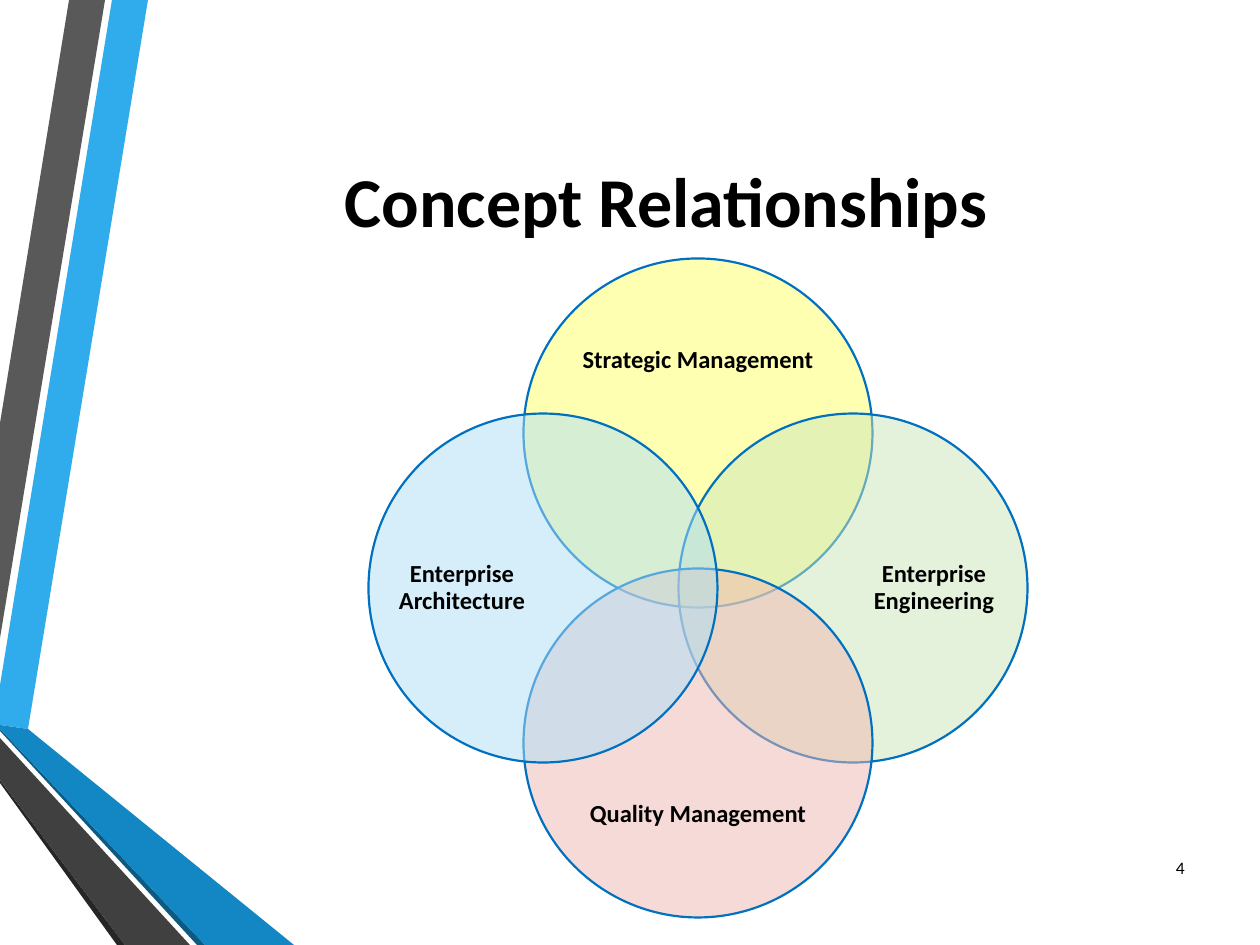
from lxml import etree
from pptx import Presentation
from pptx import util as u
from pptx.dml.color import RGBColor
from pptx.enum import shapes, text
from pptx.oxml.ns import qn

SCALE = 914400 / 126  # EMU in one px
FONT = "Calibri"

# Side ribbons, back to front: fill and corner points
RIBBONS = [
    ("30ACEC", [(0, 685), (0, 725), (28, 729), (148, 0), (112, 0)]),
    ("595959", [(105, 0), (69, 0), (0, 423), (0, 638)]),
    ("262626", [(0, 780), (0, 783), (117, 945), (125, 945)]),
    ("0C5A82", [(0, 729), (0, 731), (197, 945), (205, 945)]),
    ("1287C3", [(0, 729), (205, 945), (294, 945), (28, 729), (0, 725)]),
    ("404040", [(0, 780), (125, 945), (190, 945), (0, 738)]),
]

# Venn diagram: label, fill, direction from the centre
CENTRE_X, CENTRE_Y = 698, 588
DIAMETER, CIRCLE_SHIFT = 349, 155
CIRCLES = [
    ("Strategic Management", "FFFF66", 0, -1),
    ("Enterprise Engineering", "CCE7B9", 1, 0),
    ("Quality Management", "EFB7B1", 0, 1),
    ("Enterprise Architecture", "ACDEF7", -1, 0),
]


def px(length):
    return u.Emu(round(length * SCALE))


def rgb(code):
    return RGBColor.from_string(code)


def paint(shape, color):
    shape.shadow.inherit = False
    shape.fill.solid()
    shape.fill.fore_color.rgb = rgb(color)


def add_ribbon(page, color, points):
    builder = page.shapes.build_freeform(*points[0], scale=SCALE)
    builder.add_line_segments(points[1:], close=True)
    ribbon = builder.convert_to_shape()
    paint(ribbon, color)
    ribbon.line.fill.background()


def add_text(page, wording, left, top, width, height, size=14, bold=False,
             align=text.PP_ALIGN.CENTER, inset=None, spacing=None, after=None):
    box = page.shapes.add_textbox(px(left), px(top), px(width), px(height))
    frame = box.text_frame
    frame.word_wrap = True
    frame.vertical_anchor = text.MSO_ANCHOR.MIDDLE
    if inset is not None:
        frame.margin_left = frame.margin_right = px(inset)
        frame.margin_top = frame.margin_bottom = px(inset)
    para = frame.paragraphs[0]
    para.alignment = align
    para.line_spacing = spacing
    para.space_after = after
    span = para.add_run()
    span.text = wording
    span.font.name = FONT
    span.font.size = u.Pt(size)
    span.font.bold = bold
    span.font.color.rgb = rgb("000000")


def add_circle(page, color, x, y):
    corner = px(x - DIAMETER / 2), px(y - DIAMETER / 2)
    circle = page.shapes.add_shape(
        shapes.MSO_SHAPE.OVAL, *corner, px(DIAMETER), px(DIAMETER))
    paint(circle, color)
    circle.line.color.rgb = rgb("0070C0")
    circle.line.width = u.Pt(1.25)
    # Half-transparent fill
    tint = circle.fill._xPr.find(qn("a:solidFill"))[0]
    etree.SubElement(tint, qn("a:alpha")).set("val", "50000")


def add_venn_part(page, label, color, across, down):
    add_circle(page, color, CENTRE_X + across * CIRCLE_SHIFT,
               CENTRE_Y + down * CIRCLE_SHIFT)
    # Labels sit near the outer edge: wide above and below, tall at the sides
    width, height = (135, 268) if across else (268, 111)
    x = CENTRE_X + across * 236
    y = CENTRE_Y + down * 227
    add_text(page, label, x - width / 2, y - height / 2, width, height,
             bold=True, inset=0, spacing=0.9, after=u.Pt(5))


def main():
    deck = Presentation()
    deck.slide_width, deck.slide_height = px(1260), px(945)
    page = deck.slides.add_slide(deck.slide_layouts[6])

    # Decoration on the left
    for color, points in RIBBONS:
        add_ribbon(page, color, points)

    # Title and page number
    add_text(page, "Concept Relationships", 135, 63, 1062, 273,
             size=40, bold=True)
    add_text(page, "4", 1140, 843, 57, 50, size=10,
             align=text.PP_ALIGN.RIGHT)

    # Overlapping circles
    for part in CIRCLES:
        add_venn_part(page, *part)

    deck.save("out.pptx")


if __name__ == "__main__":
    main()
